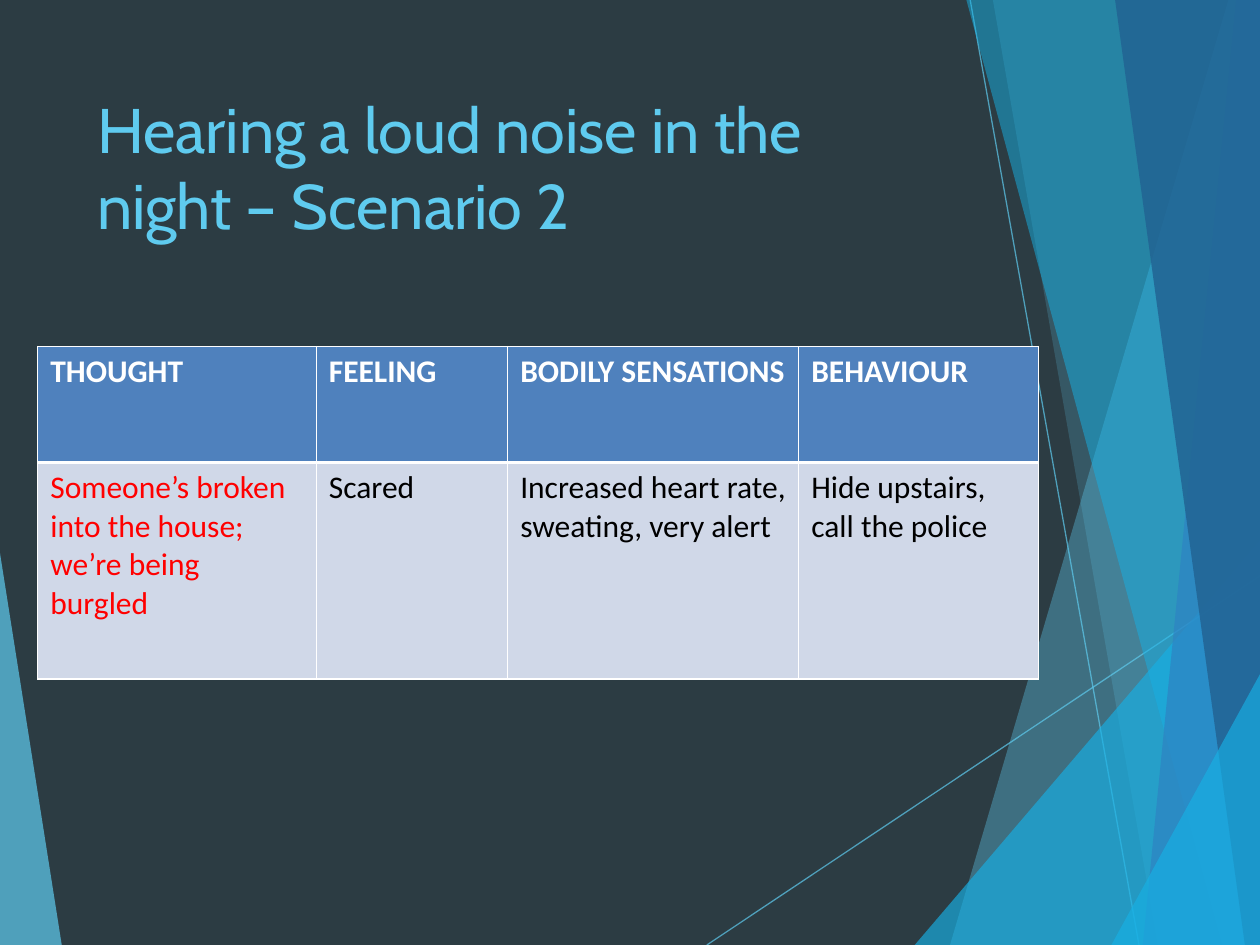
from lxml.etree import SubElement
from pptx import Presentation
from pptx.dml.color import RGBColor
from pptx.enum.shapes import MSO_CONNECTOR
from pptx.enum.text import MSO_ANCHOR, PP_ALIGN
from pptx.oxml import parse_xml
from pptx.oxml.ns import nsdecls, qn
from pptx.util import Inches, Pt

WIDTH, HEIGHT = 10, 7.5
BACKGROUND = RGBColor(0x2C, 0x3C, 0x43)
SKY = RGBColor(0x5F, 0xCB, 0xEF)
CYAN = RGBColor(0x17, 0xB0, 0xE4)
BLUE = RGBColor(0x2E, 0x83, 0xC3)
NAVY = RGBColor(0x22, 0x62, 0x92)
HEADER_FILL = RGBColor(0x4F, 0x81, 0xBD)
BODY_FILL = RGBColor(0xD0, 0xD8, 0xE8)
WHITE = RGBColor(0xFF, 0xFF, 0xFF)
BLACK = RGBColor(0x00, 0x00, 0x00)
RED = RGBColor(0xFF, 0x00, 0x00)

# Corner points in inches, colour, opacity in percent
LEFT_FACET = ([(0, 4.39), (0.49, HEIGHT), (0, HEIGHT)], SKY, 70)
RIGHT_FACETS = [
    ([(9.75, 0), (7.54, HEIGHT), (WIDTH, HEIGHT), (WIDTH, 0)], SKY, 36),
    ([(7.88, 0), (9.19, HEIGHT), (WIDTH, HEIGHT), (WIDTH, 0)], SKY, 20),
    ([(7.26, HEIGHT), (WIDTH, 4.29), (WIDTH, HEIGHT)], CYAN, 66),
    ([(7.67, 0), (9.7, HEIGHT), (WIDTH, HEIGHT), (WIDTH, 0)], CYAN, 50),
    ([(9.81, 0), (9.07, HEIGHT), (WIDTH, HEIGHT), (WIDTH, 0)], BLUE, 70),
    ([(8.85, 0), (9.88, HEIGHT), (WIDTH, HEIGHT), (WIDTH, 0)], NAVY, 82),
    ([(8.82, HEIGHT), (WIDTH, 5.35), (WIDTH, HEIGHT)], CYAN, 66),
]
RAYS = [((5.61, HEIGHT), (WIDTH, 4.57)), ((7.7, 0), (9.04, HEIGHT))]

COLUMNS = [2.21, 1.52, 2.31, 1.9]
ROWS = [0.92, 1.72]
CELLS = [
    ["THOUGHT", "FEELING", "BODILY SENSATIONS", "BEHAVIOUR"],
    ["Someone’s broken into the house; we’re being burgled", "Scared",
     "Increased heart rate, sweating, very alert",
     "Hide upstairs, call the police"],
]


def set_opacity(element, percent):
    color = element.find(".//" + qn("a:srgbClr"))
    SubElement(color, qn("a:alpha")).set("val", str(percent * 1000))


def add_facet(slide, points, color, opacity):
    start, *rest = [(Inches(x), Inches(y)) for x, y in points]
    builder = slide.shapes.build_freeform(*start)
    builder.add_line_segments(rest, close=True)
    sp = builder.convert_to_shape()
    sp.shadow.inherit = False
    sp.fill.solid()
    sp.fill.fore_color.rgb = color
    sp.line.fill.background()
    set_opacity(sp.element.spPr, opacity)


def add_ray(slide, start, end):
    ends = [Inches(v) for v in start + end]
    ray = slide.shapes.add_connector(MSO_CONNECTOR.STRAIGHT, *ends)
    ray.line.color.rgb = SKY
    ray.line.width = Pt(0.75)
    spPr = ray._element.spPr
    set_opacity(spPr, 70)
    SubElement(spPr, qn("a:effectLst"))


def format_title(slide):
    title = slide.shapes.title
    title.left, title.top = Inches(0.67), Inches(0.67)
    title.width, title.height = Inches(6.94), Inches(1.44)
    tf = title.text_frame
    tf.text = "Hearing a loud noise in the night – Scenario 2"
    tf.word_wrap = True
    tf.vertical_anchor = MSO_ANCHOR.TOP
    p = tf.paragraphs[0]
    p.alignment = PP_ALIGN.LEFT
    set_font(p, "Cabin", 36, SKY)


def set_font(p, name, size, color, bold=False):
    p.font.name = name
    p.font.size = Pt(size)
    p.font.color.rgb = color
    p.font.bold = bold


def set_borders(cell, **widths):
    """Draw white borders; widths in points are keyed by L, R, T and B."""
    tcPr = cell._tc.get_or_add_tcPr()
    for i, (side, width) in enumerate(widths.items()):
        tcPr.insert(i, parse_xml(
            f'<a:ln{side} {nsdecls("a")} w="{Pt(width)}"><a:solidFill>'
            f'<a:srgbClr val="{WHITE}"/></a:solidFill></a:ln{side}>'))


def add_scenario_table(slide):
    table = slide.shapes.add_table(
        len(ROWS), len(COLUMNS), Inches(0.3), Inches(2.75),
        Inches(sum(COLUMNS)), Inches(sum(ROWS))).table
    for column, width in zip(table.columns, COLUMNS):
        column.width = Inches(width)
    for row, height in zip(table.rows, ROWS):
        row.height = Inches(height)
    thin, thick = 0.77, 2.31
    for r, texts in enumerate(CELLS):
        header = r == 0
        for c, text in enumerate(texts):
            cell = table.cell(r, c)
            cell.text = text
            cell.fill.solid()
            cell.fill.fore_color.rgb = HEADER_FILL if header else BODY_FILL
            color = WHITE if header else RED if c == 0 else BLACK
            set_font(cell.text_frame.paragraphs[0], "Calibri", 18, color, header)
            set_borders(cell, L=thin, R=thin, T=thin if header else thick,
                        B=thick if header else thin)


def main():
    prs = Presentation()
    prs.slide_width, prs.slide_height = Inches(WIDTH), Inches(HEIGHT)
    slide = prs.slides.add_slide(prs.slide_layouts[5])
    slide.background.fill.solid()
    slide.background.fill.fore_color.rgb = BACKGROUND
    add_facet(slide, *LEFT_FACET)
    for start, end in RAYS:
        add_ray(slide, start, end)
    for facet in RIGHT_FACETS:
        add_facet(slide, *facet)
    format_title(slide)
    add_scenario_table(slide)
    prs.save("out.pptx")


if __name__ == "__main__":
    main()
